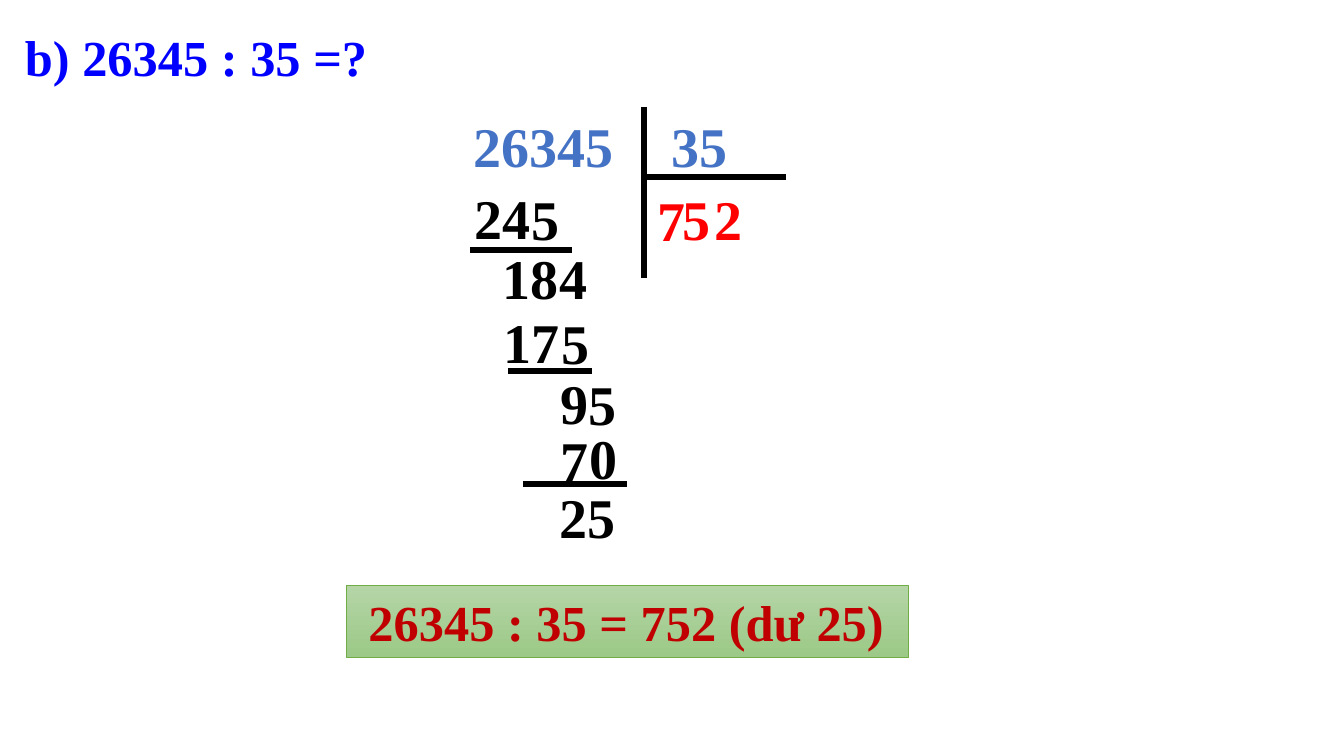
from lxml import etree
from pptx import Presentation
from pptx.dml.color import RGBColor
from pptx.enum.shapes import MSO_CONNECTOR, MSO_SHAPE
from pptx.enum.text import MSO_AUTO_SIZE, PP_ALIGN
from pptx.oxml.ns import qn
from pptx.util import Emu, Pt

PX = 914400 / 100.8
FONT = "Times New Roman"
STRAIGHT = MSO_CONNECTOR.STRAIGHT
RECTANGLE = MSO_SHAPE.RECTANGLE
GROW = MSO_AUTO_SIZE.SHAPE_TO_FIT_TEXT
LEFT = PP_ALIGN.LEFT

BLACK, BLUE, RED = "000000", "4472C4", "FF0000"
DIGIT_WIDTH, BOX_PADDING, BOX_HEIGHT = 28, 26, 78

QUESTION = "b) 26345 : 35 =?"
ANSWER = " 26345 : 35 = 752 (dư 25)"

# digits, left, top, colour
GIVEN = [("26345", 464, 107, BLUE), ("35", 662, 107, BLUE)]
STEPS = [
    ("7", 648, 181, RED),
    ("5", 522, 180, BLACK),
    ("24", 465, 179, BLACK),
    ("5", 673, 180, RED),
    ("18", 493, 239, BLACK),
    ("5", 579, 365, BLACK),
    ("4", 550, 239, BLACK),
    ("9", 551, 364, BLACK),
    ("5", 552, 304, BLACK),
    ("17", 494, 303, BLACK),
    ("2", 705, 180, RED),
    ("0", 580, 419, BLACK),
    ("7", 551, 421, BLACK),
    ("25", 550, 478, BLACK),
]

# x1, y1, x2, y2
BRACKET = [(644, 107, 644, 278), (646, 177, 786, 177)]
# left, right, y
SUBTRACTION_RULES = [(470, 572, 250), (508, 592, 371), (523, 627, 484)]


def px(*lengths):
    return [Emu(round(length * PX)) for length in lengths]


def rgb(hex_colour):
    return RGBColor.from_string(hex_colour)


def write(shape, text, size=40, colour=BLACK):
    frame = shape.text_frame
    frame.word_wrap = True
    frame.auto_size = GROW
    paragraph = frame.paragraphs[0]
    paragraph.alignment = LEFT
    run = paragraph.add_run()
    run.text = text
    run.font.name = FONT
    run.font.size = Pt(size)
    run.font.bold = True
    run.font.color.rgb = rgb(colour)


def add_digits(shapes, entries):
    for digits, left, top, colour in entries:
        width = len(digits) * DIGIT_WIDTH + BOX_PADDING
        write(shapes.add_textbox(*px(left, top, width, BOX_HEIGHT)), digits, colour=colour)


def add_rule(shapes, x1, y1, x2, y2):
    rule = shapes.add_connector(STRAIGHT, *px(x1, y1, x2, y2))
    rule.line.color.rgb = rgb(BLACK)
    rule.line.width = Pt(4.5)
    etree.SubElement(rule._element.spPr, qn("a:effectLst"))


def add_answer(shapes):
    answer = shapes.add_shape(RECTANGLE, *px(346, 585, 562, 72))
    answer.shadow.inherit = False
    answer.fill.gradient()
    answer.fill.gradient_angle = 270
    for stop, colour in zip(answer.fill.gradient_stops, ("B5D5A7", "9CC987")):
        stop.color.rgb = rgb(colour)
    answer.line.color.rgb = rgb("70AD47")
    answer.line.width = Pt(0.5)
    write(answer, ANSWER, size=36, colour="C00000")


def main():
    deck = Presentation()
    deck.slide_width, deck.slide_height = px(1344, 756)
    shapes = deck.slides.add_slide(deck.slide_layouts[6]).shapes

    write(shapes.add_textbox(*px(15, 21, 364, 72)), QUESTION, size=36, colour="0000FF")
    add_answer(shapes)

    division = shapes.add_group_shape().shapes
    add_digits(division, GIVEN)
    for ends in BRACKET:
        add_rule(division, *ends)

    add_digits(shapes, STEPS)
    for left, right, y in SUBTRACTION_RULES:
        add_rule(shapes, left, y, right, y)

    deck.save("out.pptx")


if __name__ == "__main__":
    main()
